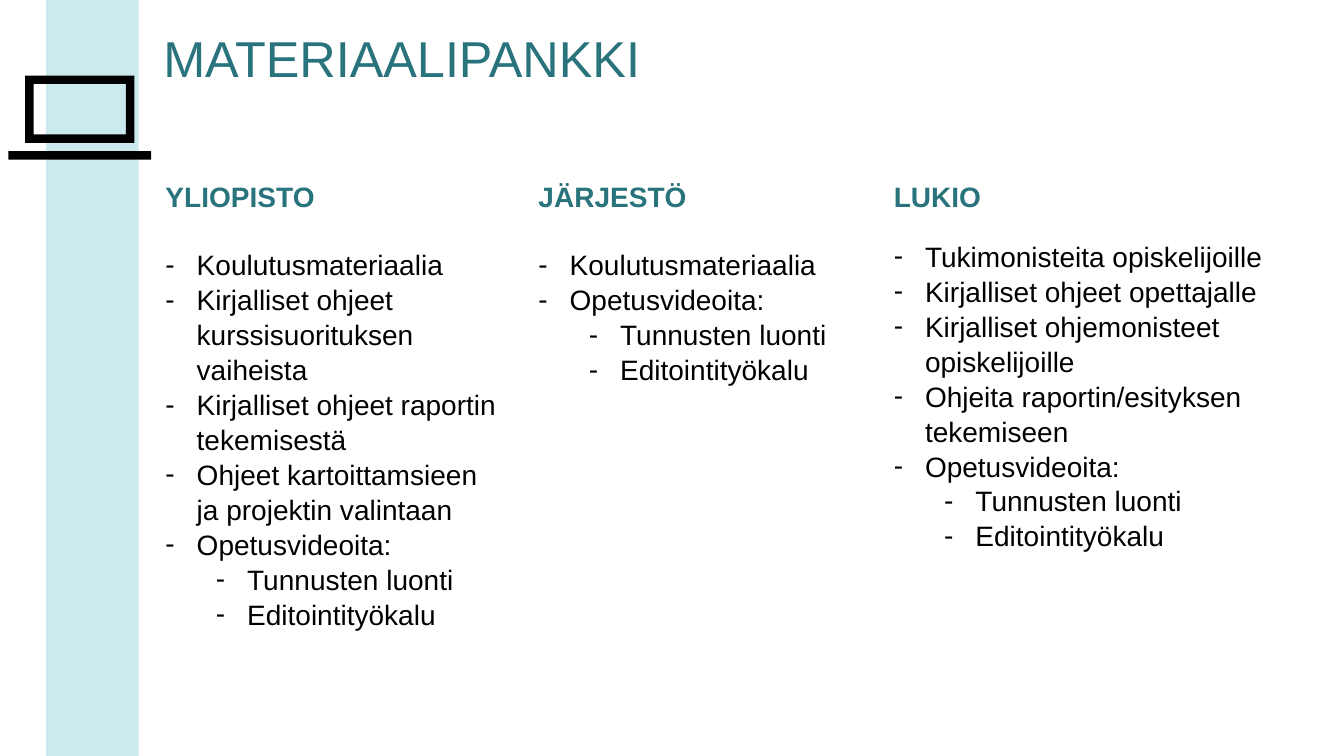
"""Build the MATERIAALIPANKKI slide."""
from math import cos, pi, sin

from lxml.etree import SubElement
from pptx import Presentation
from pptx.dml.color import RGBColor as Rgb
from pptx.enum.shapes import MSO_SHAPE as Shape
from pptx.enum.text import MSO_ANCHOR as Anchor, MSO_AUTO_SIZE as AutoSize, PP_ALIGN as Align
from pptx.oxml.ns import qn
from pptx.util import Inches, Pt

COLORS = {"teal": "29737C", "aqua": "78C8D2", "black": "000000"}
FONT = "Arial"
GRID_COLUMNS, GRID_ROWS = 160, 90
VIDEOS = [(0, "Opetusvideoita:"), (1, "Tunnusten luonti"), (1, "Editointityökalu")]
MATERIALS = [
    (1, 18.5, 42.5, 57.4, 24, "YLIOPISTO", [
        (0, "Koulutusmateriaalia"),
        (0, "Kirjalliset ohjeet kurssisuorituksen vaiheista"),
        (0, "Kirjalliset ohjeet raportin tekemisestä"),
        (0, "Ohjeet kartoittamsieen ja projektin valintaan"),
    ]),
    (2, 62.9, 37.2, 29, 24, "JÄRJESTÖ", [(0, "Koulutusmateriaalia")]),
    (3, 105.2, 46.3, 44.6, 18, "LUKIO", [
        (0, "Tukimonisteita opiskelijoille"),
        (0, "Kirjalliset ohjeet opettajalle"),
        (0, "Kirjalliset ohjemonisteet opiskelijoille"),
        (0, "Ohjeita raportin/esityksen tekemiseen"),
    ]),
]


def corner(x, y, radius, start, steps=6):
    """Return points of a clockwise quarter circle around x, y."""
    angles = [start + pi / 2 * step / steps for step in range(steps + 1)]
    return [(x + radius * cos(angle), y + radius * sin(angle)) for angle in angles]


class Designer:
    """Hold the style and the current slide."""

    def __init__(self, deck):
        """Add a slide and measure its grid."""
        self.page = deck.slides.add_slide(deck.slide_layouts.get_by_name("Comparison"))
        self.column = deck.slide_width / GRID_COLUMNS
        self.row = deck.slide_height / GRID_ROWS

    def place(self, left, top, width, height):
        """Turn grid units into lengths."""
        return (round(left * self.column), round(top * self.row),
                round(width * self.column), round(height * self.row))

    def paint(self, shape, color):
        """Fill a shape flatly."""
        shape.shadow.inherit = False
        shape.fill.solid()
        shape.fill.fore_color.rgb = Rgb.from_string(COLORS[color])
        shape.line.fill.background()

    def band(self, bounds, color, opacity):
        """Add a translucent rectangle."""
        band = self.page.shapes.add_shape(Shape.RECTANGLE, *self.place(*bounds))
        self.paint(band, color)
        tint = band.element.spPr.find(".//" + qn("a:srgbClr"))
        SubElement(tint, qn("a:alpha"), val=str(opacity * 1000))

    def outline(self, shapes, contours, color):
        """Add a freeform made of closed contours."""
        first, *others = contours
        builder = shapes.build_freeform(*first[0], scale=(self.column, self.row))
        builder.add_line_segments(first[1:])
        for contour in others:
            builder.move_to(*contour[0])
            builder.add_line_segments(contour[1:])
        self.paint(builder.convert_to_shape(), color)

    def frame(self, index, bounds):
        """Move a placeholder and return its text frame."""
        box = self.page.placeholders[index]
        box.left, box.top, box.width, box.height = self.place(*bounds)
        frame = box.text_frame
        frame.word_wrap = True
        frame.auto_size = AutoSize.NONE
        frame.vertical_anchor = Anchor.TOP
        return frame

    def typeset(self, para, text, size, color, bold=False, level=None, before=0):
        """Set a paragraph, with a dash when it has a level."""
        para.text = text
        para.level = level or 0
        para.alignment = Align.LEFT
        para.line_spacing = 1.04
        para.space_before = Pt(before)
        props = para._p.get_or_add_pPr()
        dashed = level is not None
        props.set("marL", str(Inches(0.31 + 0.5 * level) if dashed else 0))
        props.set("indent", str(Inches(-0.31) if dashed else 0))
        if dashed:
            SubElement(props, qn("a:buFont"), typeface=FONT)
            SubElement(props, qn("a:buChar"), char="-")
        else:
            SubElement(props, qn("a:buNone"))
        para.font.name = FONT
        para.font.size = Pt(size)
        para.font.bold = bold
        para.font.color.rgb = Rgb.from_string(COLORS[color])

    def title(self, text, bounds):
        """Fill the title placeholder."""
        self.typeset(self.frame(0, bounds).paragraphs[0], text, 36, "teal")

    def materials(self, index, left, width, height, gap, heading, items):
        """Fill a body placeholder with a heading and a dashed list."""
        frame = self.frame(index, (left, 20.6, width, height))
        self.typeset(frame.paragraphs[0], heading, 20, "teal", bold=True)
        for number, (level, text) in enumerate(items):
            self.typeset(frame.add_paragraph(), text, 20, "black", level=level,
                         before=0 if number else gap)

    def laptop(self):
        """Draw the laptop as a group of screen and base."""
        group = self.page.shapes.add_group_shape()
        glass = [(15, 15.84), (4.32, 15.84), (4.32, 9.84), (15, 9.84)]
        case = [(3.24, 16.92), *corner(3.99, 9.51, 0.75, pi),
                *corner(15.33, 9.51, 0.75, -pi / 2), (16.08, 16.92)]
        base = [(0.96, 17.64), (8.5, 17.64), (8.5, 17.85), (8.7, 18), (10.6, 18),
                (10.8, 17.85), (10.8, 17.64), (18.36, 17.64),
                *corner(17.64, 18, 0.72, 0), *corner(1.68, 18, 0.72, pi / 2)]
        self.outline(group.shapes, [case, glass], "black")
        self.outline(group.shapes, [base], "black")

    def tidy(self):
        """Remove empty placeholders."""
        for box in list(self.page.placeholders):
            if not box.text_frame.text:
                box.element.getparent().remove(box.element)


def main():
    """Build and save the deck."""
    deck = Presentation()
    deck.slide_width, deck.slide_height = Inches(13.33), Inches(7.5)
    designer = Designer(deck)
    designer.band((5.5, 0, 11, GRID_ROWS), "aqua", 38)
    designer.title("MATERIAALIPANKKI", (18.24, 2.3, 67.3, 8.5))
    for index, left, width, height, gap, heading, items in MATERIALS:
        designer.materials(index, left, width, height, gap, heading, items + VIDEOS)
    designer.laptop()
    designer.tidy()
    deck.save("out.pptx")


if __name__ == "__main__":
    main()
